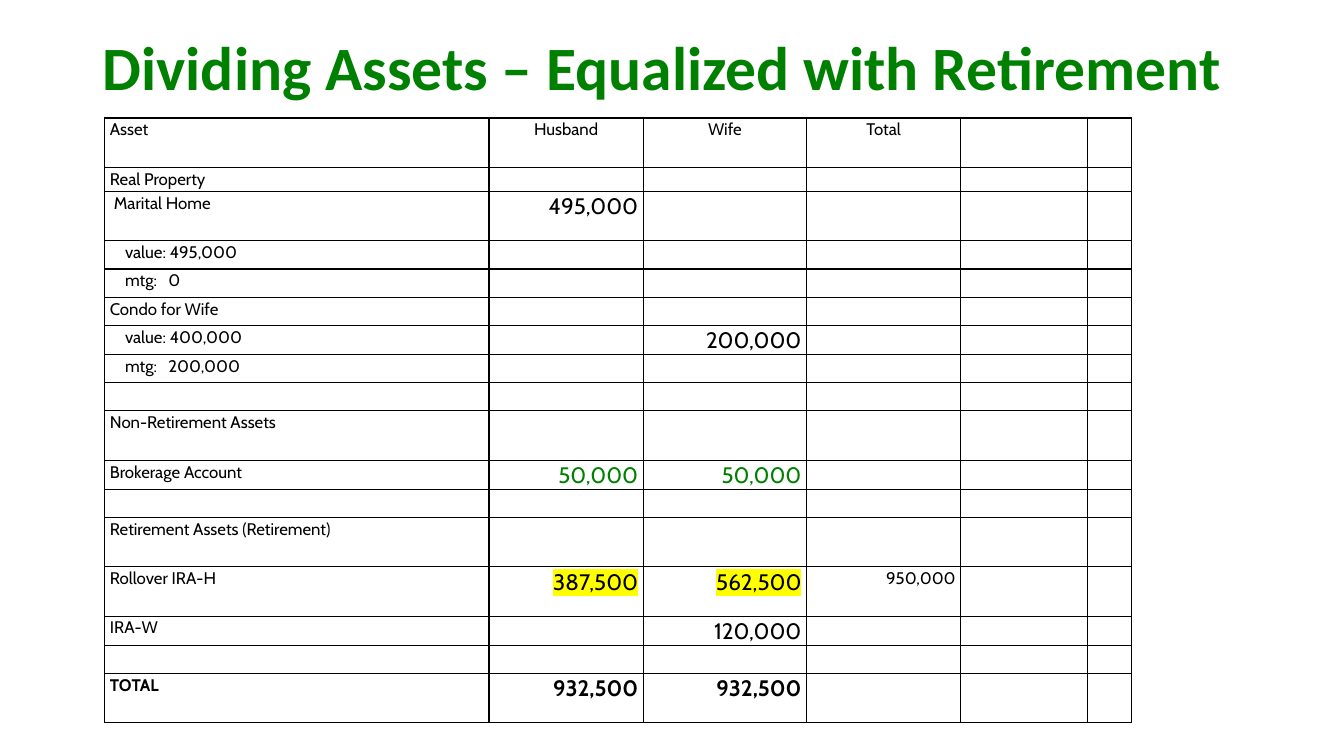
from dataclasses import dataclass, field, replace

from pptx import Presentation
from pptx import util as u
from pptx.dml import color
from pptx.enum import text
from pptx.oxml import ns, xmlchemy as xml

BLACK, GREEN, YELLOW = "000000", "008000", "FFFF00"
LEFT, MID, RIGHT = text.PP_ALIGN.LEFT, text.PP_ALIGN.CENTER, text.PP_ALIGN.RIGHT
SHORT, TALL = 0.28, 0.49
WIDTHS = (3.81, 1.53, 1.62, 1.53, 1.26, 0.43)


@dataclass
class Entry:
    words: str = ""
    size: int = 12
    ink: str = BLACK
    align: int = LEFT
    bold: bool = False
    mark: str = ""
    indent: float = 0


@dataclass
class Row:
    label: Entry = field(default_factory=Entry)
    height: float = SHORT
    others: tuple = ()


def apply(item, form: dict) -> None:
    for name, value in form.items():
        setattr(item, name, value)


def paint(target, code: str) -> None:
    target.rgb = color.RGBColor.from_string(code)


def element(parent, tag: str, **attrs):
    child = xml.OxmlElement(tag)
    for name, value in attrs.items():
        child.set(name, value)
    parent.append(child)
    return child


def border(cell) -> None:
    props = cell._tc.get_or_add_tcPr()
    for place, side in enumerate("LRTB"):
        line = element(props, f"a:ln{side}", w=str(u.Pt(1)))
        element(element(line, "a:solidFill"), "a:srgbClr", val=BLACK)
        props.insert(place, line)


def write(cell, entry: Entry) -> None:
    apply(cell, {
        "margin_left": u.Inches(0.05 + entry.indent),
        "margin_right": u.Inches(0.05),
        "margin_top": 0,
        "margin_bottom": 0,
    })
    cell.fill.background()
    border(cell)
    para = cell.text_frame.paragraphs[0]
    apply(para, {"alignment": entry.align, "line_spacing": 1.07})
    if not entry.words:
        end = element(para._p, "a:endParaRPr", sz=str(entry.size * 100))
        element(end, "a:latin", typeface="Cabin")
        return
    if "\t" in entry.words:
        tabs = element(para._p.get_or_add_pPr(), "a:tabLst")
        element(tabs, "a:tab", pos=str(u.Inches(0.43)), algn="l")
    run = para.add_run()
    run.text = entry.words
    apply(run.font, {"name": "Cabin", "size": u.Pt(entry.size), "bold": entry.bold})
    paint(run.font.color, entry.ink)
    if entry.mark:
        props = run._r.get_or_add_rPr()
        light = element(props, "a:highlight")
        element(light, "a:srgbClr", val=entry.mark)
        props.find(ns.qn("a:solidFill")).addnext(light)


def head(words: str) -> Entry:
    return Entry(words, align=MID)


def sub(words: str) -> Entry:
    return Entry(words, indent=0.15)


def sum_of(words: str, **form) -> Entry:
    return replace(Entry(words, size=16, align=RIGHT), **form)


BLANK = Entry()
HALF = sum_of("50,000", ink=GREEN)
WHOLE = sum_of("932,500", bold=True)

ROWS = (
    Row(Entry("Asset"), TALL, (head("Husband"), head("Wife"), head("Total"))),
    Row(Entry("Real Property"), 0.24),
    Row(Entry("Marital Home", indent=0.04), TALL, (sum_of("495,000"),)),
    Row(sub("value: 495,000")),
    Row(sub("mtg:\t0")),
    Row(Entry("Condo for Wife")),
    Row(sub("value: 400,000"), others=(BLANK, sum_of("200,000"))),
    Row(sub("mtg:\t200,000")),
    Row(),
    Row(Entry("Non-Retirement Assets"), TALL),
    Row(Entry("Brokerage Account"), others=(HALF, HALF)),
    Row(),
    Row(Entry("Retirement Assets (Retirement)"), TALL),
    Row(Entry("Rollover IRA-H"), TALL, (
        sum_of("387,500", mark=YELLOW),
        sum_of("562,500", mark=YELLOW),
        sum_of("950,000", size=12),
    )),
    Row(Entry("IRA-W"), others=(BLANK, sum_of("120,000"))),
    Row(),
    Row(Entry("TOTAL", bold=True), TALL, (WHOLE, WHOLE)),
)


def add_title(slide) -> None:
    title = slide.shapes.title
    apply(title, {
        "left": u.Inches(0.92), "top": u.Inches(-0.02),
        "width": u.Inches(11.5), "height": u.Inches(1.45),
    })
    frame = title.text_frame
    frame.text = "Dividing Assets – Equalized with Retirement"
    apply(frame, {
        "vertical_anchor": text.MSO_ANCHOR.MIDDLE,
        "auto_size": text.MSO_AUTO_SIZE.NONE,
        "word_wrap": True,
    })
    para = frame.paragraphs[0]
    apply(para, {"alignment": LEFT, "line_spacing": 0.9})
    font = para.runs[0].font
    apply(font, {"name": "Calibri", "size": u.Pt(44), "bold": True})
    paint(font.color, GREEN)


def add_assets(slide) -> None:
    high = sum(row.height for row in ROWS)
    frame = slide.shapes.add_table(
        len(ROWS), len(WIDTHS), u.Inches(1.04), u.Inches(1.17),
        u.Inches(sum(WIDTHS)), u.Inches(high))
    table = frame.table
    apply(table, {"first_row": False, "horz_banding": False})
    for column, width in zip(table.columns, WIDTHS):
        column.width = u.Inches(width)
    for line, row in zip(table.rows, ROWS):
        line.height = u.Inches(row.height)
        filled = (row.label, *row.others)
        blanks = (BLANK,) * (len(WIDTHS) - len(filled))
        for cell, entry in zip(line.cells, filled + blanks):
            write(cell, entry)


def main() -> None:
    deck = Presentation()
    apply(deck, {"slide_width": u.Inches(13.33), "slide_height": u.Inches(7.5)})
    slide = deck.slides.add_slide(deck.slide_layouts[5])
    add_title(slide)
    add_assets(slide)
    deck.save("out.pptx")


if __name__ == "__main__":
    main()
